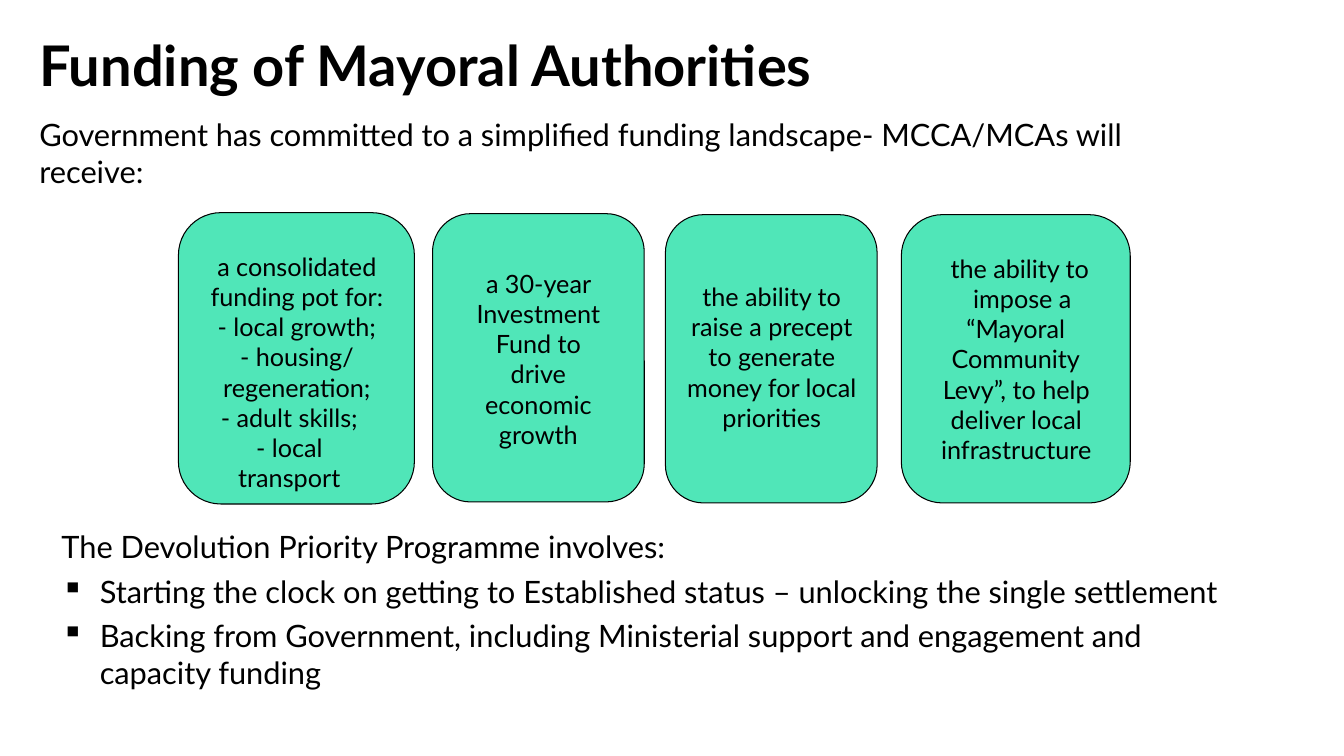
from pptx import Presentation
from pptx.dml.color import RGBColor
from pptx.enum.shapes import MSO_SHAPE
from pptx.enum.text import MSO_ANCHOR, MSO_AUTO_SIZE, PP_ALIGN
from pptx.oxml.xmlchemy import OxmlElement
from pptx.util import Inches, Pt

ROUNDED = MSO_SHAPE.ROUNDED_RECTANGLE
MIDDLE, TOP = MSO_ANCHOR.MIDDLE, MSO_ANCHOR.TOP
LEFT, CENTER = PP_ALIGN.LEFT, PP_ALIGN.CENTER
GROW = MSO_AUTO_SIZE.SHAPE_TO_FIT_TEXT
TITLE_ONLY = 5

COLORS = {"text": "000000", "card": "50E6B8", "outline": "000000"}

# Paragraphs are (text, left margin, right margin, first-line indent) in inches
FUNDING_STREAMS = [
    {"card": (1.77, 2.11, 2.34, 2.89), "text_area": (2.06, 2.48, 1.77, 2.14),
     "paragraphs": [
         ("a consolidated", 0, 0, 0),
         ("funding pot for:", 0, 0, 0),
         ("- local growth;", 0, 0, 0),
         ("- housing/ regeneration;", 0.15, 0.15, 0),
         ("- adult skills;", 0, 0.15, 0),
         ("- local transport", 0.26, 0.41, 0)]},
    {"card": (4.29, 2.12, 2.1, 2.86), "text_area": (4.61, 2.65, 1.46, 1.83),
     "paragraphs": [
         ("a 30-year Investment Fund to drive economic growth", 0.08, 0.08, 0)]},
    {"card": (6.6, 2.13, 2.1, 2.86), "text_area": (6.8, 2.78, 1.7, 1.53),
     "paragraphs": [
         ("the ability to raise a precept to generate money for local priorities",
          0.01, 0, 0)]},
    {"card": (8.94, 2.13, 2.27, 2.86), "text_area": (9.09, 2.5, 1.97, 2.14),
     "paragraphs": [
         ("the ability to", 0.08, 0, 0),
         ("impose a “Mayoral Community", 0.17, 0.17, 0.13),
         ("Levy”, to help deliver local infrastructure", 0.01, 0, 0)]},
]

PROGRAMME = [
    ("The Devolution Priority Programme involves:", 0.01, 0, 0),
    ("Starting the clock on getting to Established status – unlocking the "
     "single settlement", 0.39, 0, -0.38),
    ("Backing from Government, including Ministerial support and engagement "
     "and capacity funding", 0.39, 0, -0.38),
]


class SlideBuilder:
    font = "Lato"
    bullet = "▪"

    def __init__(self, slide):
        self.slide = slide

    def color(self, name):
        return RGBColor.from_string(COLORS[name])

    def fill_text(self, shape, paragraphs, size, align=LEFT, gap=0,
                  bold=False, anchor=TOP):
        frame = shape.text_frame
        frame.word_wrap = True
        frame.auto_size = GROW
        frame.vertical_anchor = anchor
        frame.margin_left = frame.margin_right = frame.margin_bottom = 0
        frame.margin_top = Inches(0.01)
        frame.text = "\n".join(text for text, *_ in paragraphs)
        for index, paragraph in enumerate(frame.paragraphs):
            _, left, right, indent = paragraphs[index]
            paragraph.alignment = align
            paragraph.line_spacing = 1.0
            paragraph.space_before = Pt(gap if index else 0)
            self.indent(paragraph, left, right, indent)
            for run in paragraph.runs:
                run.font.name = self.font
                run.font.size = Pt(size)
                run.font.bold = bold
                run.font.color.rgb = self.color("text")

    def indent(self, paragraph, left, right, indent):
        properties = paragraph._p.get_or_add_pPr()
        for key, inches in (("marL", left), ("marR", right), ("indent", indent)):
            properties.set(key, str(Inches(inches)))
        # A hanging first line carries a bullet
        if indent < 0:
            bullet = OxmlElement("a:buChar")
            bullet.set("char", self.bullet)
            properties.append(bullet)

    def title(self, text, area):
        title = self.slide.shapes.title
        title.left, title.top, title.width, title.height = map(Inches, area)
        self.fill_text(title, [(text, 0.01, 0, 0)], 40, bold=True, anchor=MIDDLE)

    def text(self, paragraphs, area, size, **style):
        box = self.slide.shapes.add_textbox(*map(Inches, area))
        self.fill_text(box, paragraphs, size, **style)

    def card(self, area):
        card = self.slide.shapes.add_shape(ROUNDED, *map(Inches, area))
        card.adjustments[0] = 0.18
        card.shadow.inherit = False
        card.fill.solid()
        card.fill.fore_color.rgb = self.color("card")
        card.line.color.rgb = self.color("outline")
        card.line.width = Pt(0.75)


def main():
    presentation = Presentation()
    presentation.slide_width = Inches(13.33)
    presentation.slide_height = Inches(7.5)
    layout = presentation.slide_layouts[TITLE_ONLY]
    builder = SlideBuilder(presentation.slides.add_slide(layout))

    # Heading and introduction
    builder.title("Funding of Mayoral Authorities", (0.38, 0.29, 8.32, 0.69))
    builder.text([("Government has committed to a simplified funding landscape- "
                   "MCCA/MCAs will receive:", 0.01, 0, 0)],
                 (0.38, 1.14, 11.02, 0.75), 22)

    # Funding stream cards
    for stream in FUNDING_STREAMS:
        builder.card(stream["card"])
        builder.text(stream["paragraphs"], stream["text_area"], 18, align=CENTER)

    # Priority programme
    builder.text(PROGRAMME, (0.6, 5.23, 11.74, 1.63), 22, gap=5.3)

    presentation.save("out.pptx")


if __name__ == "__main__":
    main()
